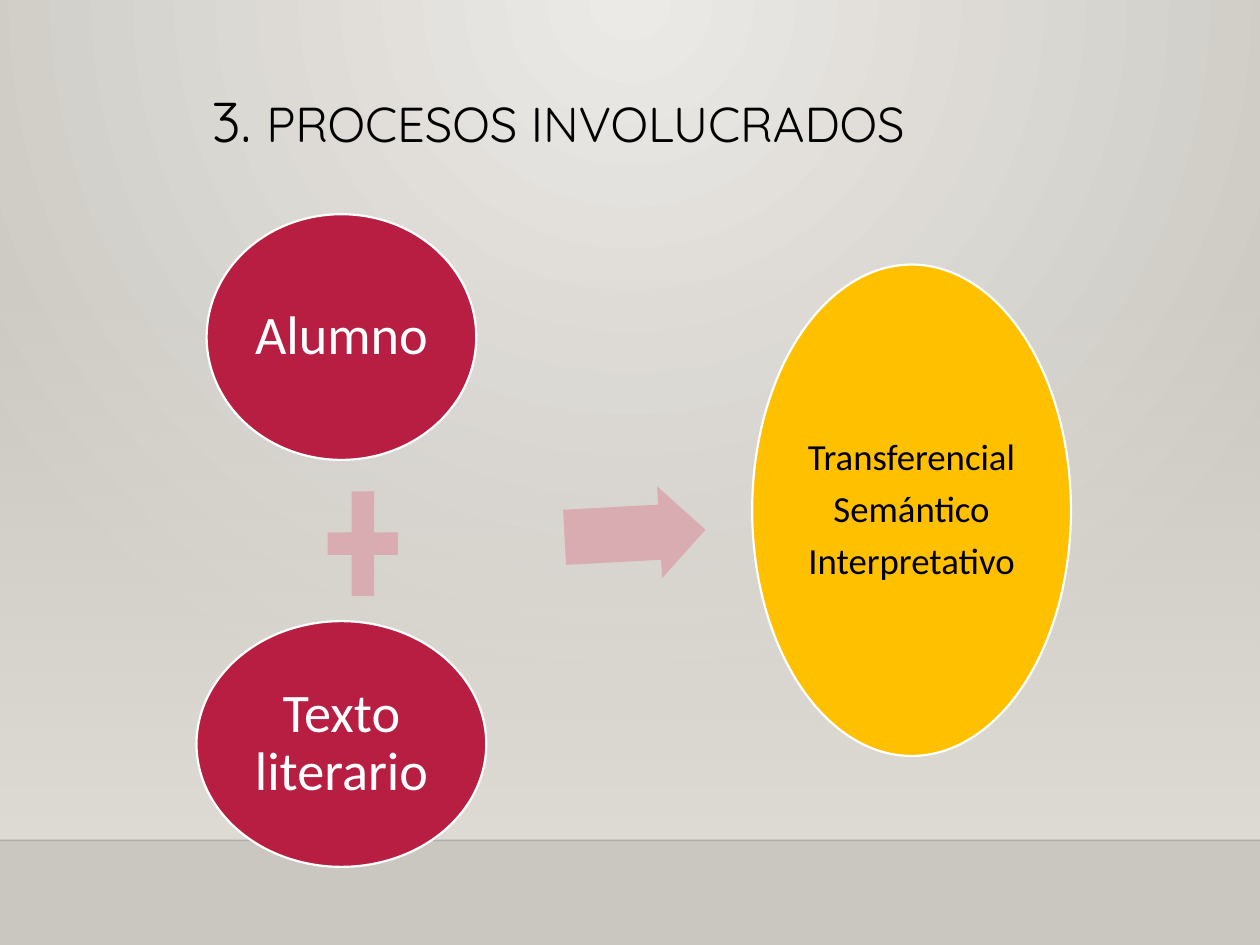
import pptx
import pptx.dml.color
import pptx.enum.shapes
import pptx.enum.text
import pptx.oxml
import pptx.oxml.ns
import pptx.util
from pptx.util import Inches

SHAPE = pptx.enum.shapes.MSO_SHAPE
ANCHOR = pptx.enum.text.MSO_ANCHOR
ALIGN = pptx.enum.text.PP_ALIGN
qn = pptx.oxml.ns.qn

BLACK, WHITE = "000000", "FFFFFF"
CRIMSON, PINK, AMBER = "B71E42", "D8ACB0", "FFC000"
SLIDE_WIDTH, SLIDE_HEIGHT, FLOOR = 10, 7.5, 6.67


def rgb(color):
    return pptx.dml.color.RGBColor.from_string(color)


def add_xml(parent, xml):
    """Append one DrawingML element, given without its namespace."""
    tag, rest = xml.split(" ", 1)
    element = pptx.oxml.parse_xml(f"<a:{tag} {pptx.oxml.ns.nsdecls('a')} {rest}")
    parent.append(element)
    return element


def set_gradient(fill, first, last):
    fill.gradient()
    for stop, color, position in zip(fill.gradient_stops, (first, last), (0, 1)):
        stop.color.rgb = rgb(color)
        stop.position = position


def set_alpha(element, percent):
    color = next(element.iter(qn("a:srgbClr")))
    add_xml(color, f'alpha val="{percent * 1000}"/>')


def write(frame, *paragraphs, align=ALIGN.CENTER, anchor=ANCHOR.MIDDLE, inset=0.04, left=None,
          font="Calibri", color=BLACK, spacing=0):
    """Fill a text frame; each paragraph is a list of (text, size) runs."""
    frame.word_wrap = True
    frame.vertical_anchor = anchor
    frame.margin_top = frame.margin_bottom = frame.margin_right = Inches(inset)
    frame.margin_left = Inches(inset if left is None else left)
    for index, runs in enumerate(paragraphs):
        paragraph = frame.add_paragraph() if index else frame.paragraphs[0]
        paragraph.alignment = align
        paragraph.line_spacing = 0.9
        paragraph.space_after = pptx.util.Pt(round(runs[0][1] * spacing))
        for text, size in runs:
            run = paragraph.add_run()
            run.text = text
            run.font.name = font
            run.font.size = pptx.util.Pt(size)
            run.font.color.rgb = rgb(color)


def add_shape(slide, kind, box, fill=None, outline=None):
    shape = slide.shapes.add_shape(kind, *map(Inches, box))
    shape.shadow.inherit = False
    if fill:
        shape.fill.solid()
        shape.fill.fore_color.rgb = rgb(fill)
    if outline:
        shape.line.color.rgb = rgb(outline)
        shape.line.width = pptx.util.Pt(1.25)
    else:
        shape.line.fill.background()
    return shape


def add_backdrop(slide):
    backdrop = slide.background.fill
    set_gradient(backdrop, "ECEAE7", "CAC7C1")
    gradient = next(slide.element.iter(qn("a:gradFill")))
    gradient.remove(gradient.find(qn("a:lin")))
    add_xml(gradient, 'path path="circle"><a:fillToRect l="43000" t="0" r="43000" b="100000"/></a:path>')

    wall = add_shape(slide, SHAPE.RECTANGLE, (0, 2.2, SLIDE_WIDTH, FLOOR - 2.2))
    set_gradient(wall.fill, "DFDBD5", "DFDBD5")
    wall.fill.gradient_angle = 270
    set_alpha(wall.element.spPr, 0)

    edge = slide.shapes.add_connector(pptx.enum.shapes.MSO_CONNECTOR.STRAIGHT, 0, Inches(FLOOR),
                                      Inches(SLIDE_WIDTH), Inches(FLOOR))
    edge.line.color.rgb = rgb("000001")
    edge.line.width = pptx.util.Pt(1)
    set_alpha(edge.line._get_or_add_ln(), 20)
    pptx.oxml.ns.qn("a:effectLst")
    add_xml(edge.element.spPr, "effectLst />")


def add_title(slide, box):
    title = slide.shapes.add_textbox(*map(Inches, box))
    write(title.text_frame, [("3. ", 32), ("PROCESOS INVOLUCRADOS", 28)], align=ALIGN.LEFT,
          anchor=ANCHOR.BOTTOM, inset=0.05, left=0.93, font="Quicksand")


def add_oval(slide, box, lines, size, fill, color, inset):
    oval = add_shape(slide, SHAPE.OVAL, box, fill, WHITE)
    write(oval.text_frame, *[[(line, size)] for line in lines], color=color, inset=inset, spacing=0.35)


def add_process(slide, left, top):
    """Two inputs joined by a plus sign, with an arrow to the resulting processes."""
    center = left + 1.15
    inputs = (("Alumno", 2.14, 0), ("Texto literario", 2.3, 3.23))
    for name, width, offset in inputs:
        add_oval(slide, (center - width / 2, top + offset, width, 1.95), [name], 31, CRIMSON, WHITE, 0.04)
    add_shape(slide, SHAPE.MATH_PLUS, (left + 0.94, top + 2.05, 0.76, 1.13), PINK)
    arrow = add_shape(slide, SHAPE.RIGHT_ARROW, (left + 2.92, top + 2.17, 1.12, 0.73), PINK)
    arrow.adjustments[0] = 0.6
    arrow.adjustments[1] = 0.5
    arrow.rotation = 356.9
    add_oval(slide, (left + 4.41, top + 0.4, 2.53, 3.9),
             ["Transferencial", "Semántico", "Interpretativo"], 21, AMBER, BLACK, 0.03)


def main():
    deck = pptx.Presentation()
    deck.slide_width, deck.slide_height = Inches(SLIDE_WIDTH), Inches(SLIDE_HEIGHT)
    slide = deck.slides.add_slide(deck.slide_layouts[6])
    add_backdrop(slide)
    add_title(slide, (0.75, 0.35, 7.88, 0.93))
    add_process(slide, 1.56, 1.7)
    deck.save("out.pptx")


if __name__ == "__main__":
    main()
